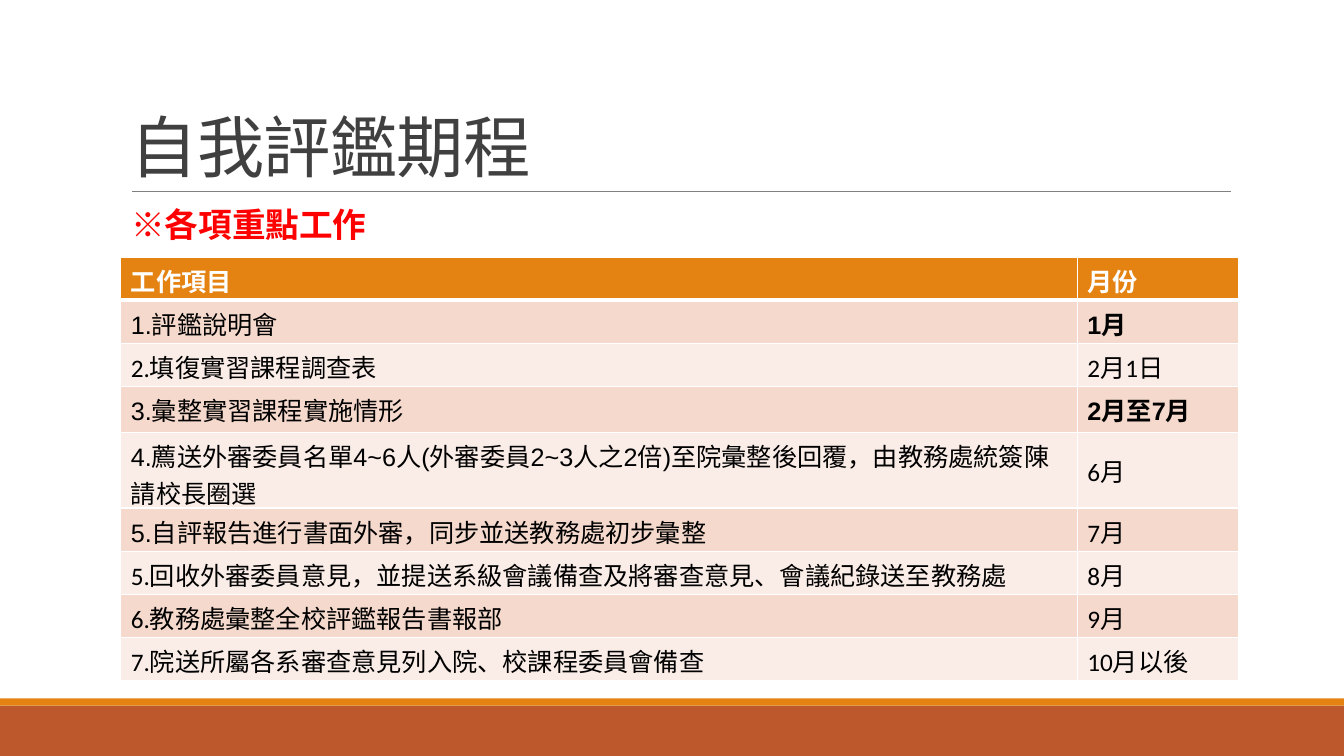
from dataclasses import dataclass
from typing import NamedTuple

from lxml import etree
from pptx import Presentation
from pptx.dml.color import RGBColor
from pptx.enum.shapes import MSO_CONNECTOR, MSO_SHAPE
from pptx.enum.text import MSO_ANCHOR, MSO_AUTO_SIZE, PP_ALIGN
from pptx.oxml.ns import qn
from pptx.util import Emu, Pt

RECT = MSO_SHAPE.RECTANGLE
STRAIGHT = MSO_CONNECTOR.STRAIGHT
BOTTOM, MIDDLE, TOP = MSO_ANCHOR.BOTTOM, MSO_ANCHOR.MIDDLE, MSO_ANCHOR.TOP
NO_AUTOFIT = MSO_AUTO_SIZE.NONE
LEFT = PP_ALIGN.LEFT
EMU_PER_PX = 9525
TITLE_ONLY = 5


@dataclass(frozen=True)
class Theme:
    orange: str = "E48312"
    rust: str = "BD582C"
    rule: str = "808080"
    title: str = "404040"
    accent: str = "FF0000"
    text: str = "000000"
    white: str = "FFFFFF"
    bands: tuple[str, str] = ("F5D9CC", "FAEDE7")
    body_font: str = "Calibri"
    digit_font: str = "Arial"
    cjk_font: str = "Noto Sans CJK TC"
    title_size: int = 48
    subtitle_size: int = 24
    table_size: int = 18


THEME = Theme()


class Box(NamedTuple):
    x: int
    y: int
    w: int
    h: int


class Bar(NamedTuple):
    box: Box
    color: str


class Style(NamedTuple):
    size: int
    color: str
    font: str = THEME.body_font
    bold: bool = False


class Task(NamedTuple):
    name: str
    month: str
    name_font: str = THEME.body_font
    month_font: str = THEME.body_font
    month_bold: bool = False
    height: int = 41


CALIBRI, ARIAL = THEME.body_font, THEME.digit_font
BARS = [
    Bar(Box(0, 672, 1280, 48), THEME.rust),
    Bar(Box(0, 665, 1280, 7), THEME.orange),
]
TITLE_BOX = Box(115, 30, 1056, 152)
SUBTITLE_BOX = Box(115, 194, 1056, 422)
TABLE_X, TABLE_Y = 115, 245
COLUMNS = (911, 154)
HEADER = ("工作項目", "月份")
HEADER_HEIGHT = 41
TASKS = [
    Task("1.評鑑說明會", "1月", ARIAL, ARIAL, True),
    Task("2.填復實習課程調查表", "2月1日"),
    Task("3.彙整實習課程實施情形", "2月至7月", ARIAL, ARIAL, True, 44),
    Task("4.薦送外審委員名單4~6人(外審委員2~3人之2倍)至院彙整後回覆，由教務處統簽陳請校長圈選",
         "6月", ARIAL, height=72),
    Task("5.自評報告進行書面外審，同步並送教務處初步彙整", "7月", ARIAL),
    Task("5.回收外審委員意見，並提送系級會議備查及將審查意見、會議紀錄送至教務處", "8月"),
    Task("6.教務處彙整全校評鑑報告書報部", "9月"),
    Task("7.院送所屬各系審查意見列入院、校課程委員會備查", "10月以後"),
]


def px(n: int) -> Emu:
    return Emu(n * EMU_PER_PX)


def rgb(color: str) -> RGBColor:
    return RGBColor.from_string(color)


def add_run(p, text: str, style: Style):
    r = p.add_run()
    r.text = text
    r.font.size = Pt(style.size)
    r.font.bold = style.bold
    r.font.name = style.font
    r.font.color.rgb = rgb(style.color)
    ea = etree.Element(qn("a:ea"), typeface=THEME.cjk_font)
    r.font._element.find(qn("a:latin")).addnext(ea)
    return r


def add_bar(s, bar: Bar) -> None:
    sp = s.shapes.add_shape(RECT, *map(px, bar.box))
    sp.shadow.inherit = False
    sp.fill.solid()
    sp.fill.fore_color.rgb = rgb(bar.color)
    sp.line.fill.background()


def add_rule(s, x1: int, x2: int, y: int) -> None:
    line = s.shapes.add_connector(STRAIGHT, px(x1), px(y), px(x2), px(y))
    line.line.color.rgb = rgb(THEME.rule)
    line.line.width = Pt(0.5)
    etree.SubElement(line._element.spPr, qn("a:effectLst"))


def set_title(s, text: str) -> None:
    sp = s.shapes.title
    sp.left, sp.top, sp.width, sp.height = map(px, TITLE_BOX)
    tf = sp.text_frame
    tf.auto_size = NO_AUTOFIT
    tf.vertical_anchor = BOTTOM
    p = tf.paragraphs[0]
    p.alignment = LEFT
    p.line_spacing = 0.85
    r = add_run(p, text, Style(THEME.title_size, THEME.title))
    r.font._element.set("spc", "-50")


def add_subtitle(s) -> None:
    tf = s.shapes.add_textbox(*map(px, SUBTITLE_BOX)).text_frame
    tf.word_wrap = True
    tf.margin_left, tf.margin_right = px(10), 0
    p = tf.paragraphs[0]
    p.line_spacing = 0.9
    p.space_before, p.space_after = Pt(12), Pt(2)
    size, color = THEME.subtitle_size, THEME.accent
    add_run(p, "※", Style(size, color, THEME.cjk_font, True))
    add_run(p, "各項重點工作", Style(size, color, CALIBRI, True))


def set_borders(cell, top: int, bottom: int) -> None:
    """Draw white cell edges, with top and bottom widths in points."""
    tc_pr = cell._tc.get_or_add_tcPr()
    edges = {"a:lnL": 1, "a:lnR": 1, "a:lnT": top, "a:lnB": bottom}
    for i, (tag, width) in enumerate(edges.items()):
        ln = etree.Element(qn(tag), w=str(Pt(width)))
        fill = etree.SubElement(ln, qn("a:solidFill"))
        etree.SubElement(fill, qn("a:srgbClr"), val=THEME.white)
        tc_pr.insert(i, ln)


def fill_cell(cell, text: str, style: Style, fill: str, anchor) -> None:
    cell.fill.solid()
    cell.fill.fore_color.rgb = rgb(fill)
    cell.vertical_anchor = anchor
    add_run(cell.text_frame.paragraphs[0], text, style)


def add_schedule(s) -> None:
    heights = [HEADER_HEIGHT] + [task.height for task in TASKS]
    box = Box(TABLE_X, TABLE_Y, sum(COLUMNS), sum(heights))
    table = s.shapes.add_table(len(heights), len(COLUMNS), *map(px, box)).table
    for column, width in zip(table.columns, COLUMNS):
        column.width = px(width)
    for row, height in zip(table.rows, heights):
        row.height = px(height)

    size = THEME.table_size
    for cell, text in zip(table.rows[0].cells, HEADER):
        fill_cell(cell, text, Style(size, THEME.white, bold=True), THEME.orange, TOP)
        set_borders(cell, top=1, bottom=3)
    for i, task in enumerate(TASKS):
        name, month = table.rows[i + 1].cells
        band = THEME.bands[i % 2]
        fill_cell(name, task.name, Style(size, THEME.text, task.name_font), band, MIDDLE)
        month_style = Style(size, THEME.text, task.month_font, task.month_bold)
        fill_cell(month, task.month, month_style, band, MIDDLE)
        for cell in (name, month):
            set_borders(cell, top=1 if i else 3, bottom=1)


def main() -> None:
    prs = Presentation()
    prs.slide_width, prs.slide_height = px(1280), px(720)
    s = prs.slides.add_slide(prs.slide_layouts[TITLE_ONLY])
    for bar in BARS:
        add_bar(s, bar)
    add_rule(s, 126, 1172, 182)
    set_title(s, "自我評鑑期程")
    add_subtitle(s)
    add_schedule(s)
    prs.save("out.pptx")


if __name__ == "__main__":
    main()
